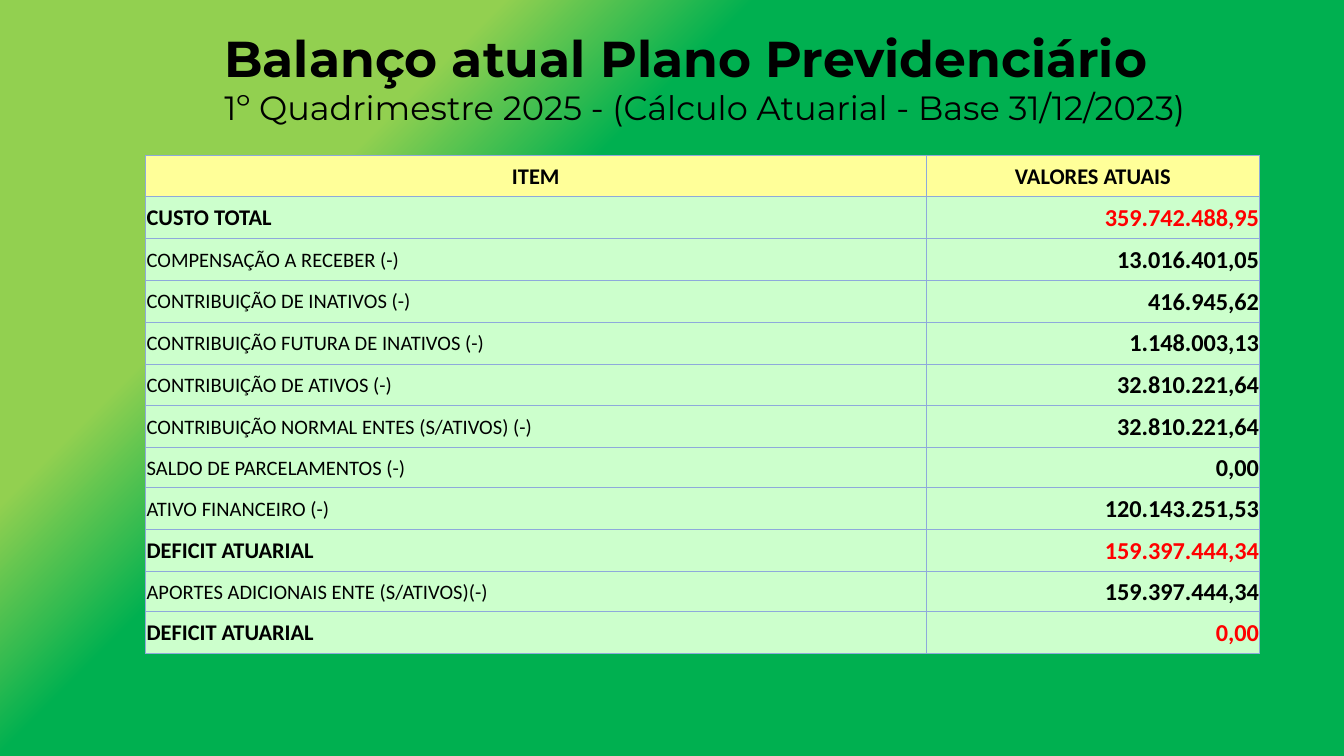
from lxml.etree import SubElement
from pptx import Presentation
from pptx.dml.color import RGBColor
from pptx.enum.text import MSO_ANCHOR as Anchor, PP_ALIGN as Align
from pptx.oxml.ns import qn
from pptx.util import Cm, Pt

LIME = RGBColor(0x92, 0xD0, 0x50)
GREEN = RGBColor(0x00, 0xB0, 0x50)
YELLOW = RGBColor(0xFF, 0xFF, 0x99)
MINT = RGBColor(0xCC, 0xFF, 0xCC)
BLUE = RGBColor(0x8E, 0xA9, 0xDB)
BLACK = RGBColor(0, 0, 0)
RED = RGBColor(0xFF, 0, 0)

HEADINGS = ("ITEM", "VALORES ATUAIS")
ENTRIES = [
    ("CUSTO TOTAL", "359.742.488,95"),
    ("COMPENSAÇÃO A RECEBER (-)", "13.016.401,05"),
    ("CONTRIBUIÇÃO DE INATIVOS (-)", "416.945,62"),
    ("CONTRIBUIÇÃO FUTURA DE INATIVOS (-)", "1.148.003,13"),
    ("CONTRIBUIÇÃO DE ATIVOS (-)", "32.810.221,64"),
    ("CONTRIBUIÇÃO NORMAL ENTES (S/ATIVOS) (-)", "32.810.221,64"),
    ("SALDO DE PARCELAMENTOS (-)", "0,00"),
    ("ATIVO FINANCEIRO (-)", "120.143.251,53"),
    ("DEFICIT ATUARIAL", "159.397.444,34"),
    ("APORTES ADICIONAIS ENTE (S/ATIVOS)(-)", "159.397.444,34"),
    ("DEFICIT ATUARIAL", "0,00"),
]
COLUMN_WIDTHS = (Cm(14.75), Cm(6.31))
ROW_HEIGHT, SHORT_ROW_HEIGHT = Cm(0.79), Cm(0.76)
SHORT_ROWS = (7, 10)


def paint_background(page):
    fill = page.background.fill
    fill.gradient()
    fill.gradient_angle = 315
    for stop, color, position in zip(fill.gradient_stops, (LIME, GREEN), (0.24, 0.36)):
        stop.color.rgb = color
        stop.position = position


def add_run(para, text, size, font, bold, color=BLACK):
    span = para.add_run()
    span.text = text
    span.font.size = Pt(size)
    span.font.name = font
    span.font.bold = bold
    span.font.color.rgb = color


def add_title(page):
    box = page.shapes.add_textbox(Cm(3.99), Cm(0.48), Cm(20.57), Cm(2.06))
    frame = box.text_frame
    frame.word_wrap = True
    frame.vertical_anchor = Anchor.BOTTOM
    para = frame.paragraphs[0]
    add_run(para, "Balanço atual Plano Previdenciário", 27, "Montserrat", True)
    para.add_line_break()
    add_run(para, "1º Quadrimestre 2025 - (Cálculo Atuarial - Base 31/12/2023)",
            18, "Montserrat", False)


def add_borders(cell):
    properties = cell._tc.get_or_add_tcPr()
    for position, side in enumerate(("a:lnL", "a:lnR", "a:lnT", "a:lnB")):
        line = SubElement(properties, qn(side), w=str(Pt(0.5)))
        properties.insert(position, line)
        solid = SubElement(line, qn("a:solidFill"))
        SubElement(solid, qn("a:srgbClr"), val=str(BLUE))


def fill_cell(cell, text, size, align, fill, bold=True, color=BLACK):
    cell.fill.solid()
    cell.fill.fore_color.rgb = fill
    cell.vertical_anchor = Anchor.MIDDLE
    cell.margin_left = cell.margin_right = cell.margin_top = Cm(0.02)
    cell.margin_bottom = 0
    para = cell.text_frame.paragraphs[0]
    para.alignment = align
    add_run(para, text, size, "Calibri", bold, color)
    add_borders(cell)


def add_balance_table(page):
    row_count = len(ENTRIES) + 1
    frame = page.shapes.add_table(row_count, 2, Cm(2.75), Cm(2.93),
                                  sum(COLUMN_WIDTHS), ROW_HEIGHT * row_count)
    table = frame.table
    for column, width in zip(table.columns, COLUMN_WIDTHS):
        column.width = width
    for number, row in enumerate(table.rows):
        row.height = SHORT_ROW_HEIGHT if number in SHORT_ROWS else ROW_HEIGHT
    for column, heading in enumerate(HEADINGS):
        fill_cell(table.cell(0, column), heading, 12, Align.CENTER, YELLOW)
    for number, (item, value) in enumerate(ENTRIES, start=1):
        is_total = not item.endswith("(-)")
        fill_cell(table.cell(number, 0), item, 12 if is_total else 11,
                  Align.LEFT, MINT, bold=is_total)
        fill_cell(table.cell(number, 1), value, 13, Align.RIGHT, MINT,
                  color=RED if is_total else BLACK)


def main():
    deck = Presentation()
    deck.slide_width, deck.slide_height = Cm(25.4), Cm(14.29)
    page = deck.slides.add_slide(deck.slide_layouts[6])
    paint_background(page)
    add_title(page)
    add_balance_table(page)
    deck.save("out.pptx")


if __name__ == "__main__":
    main()
